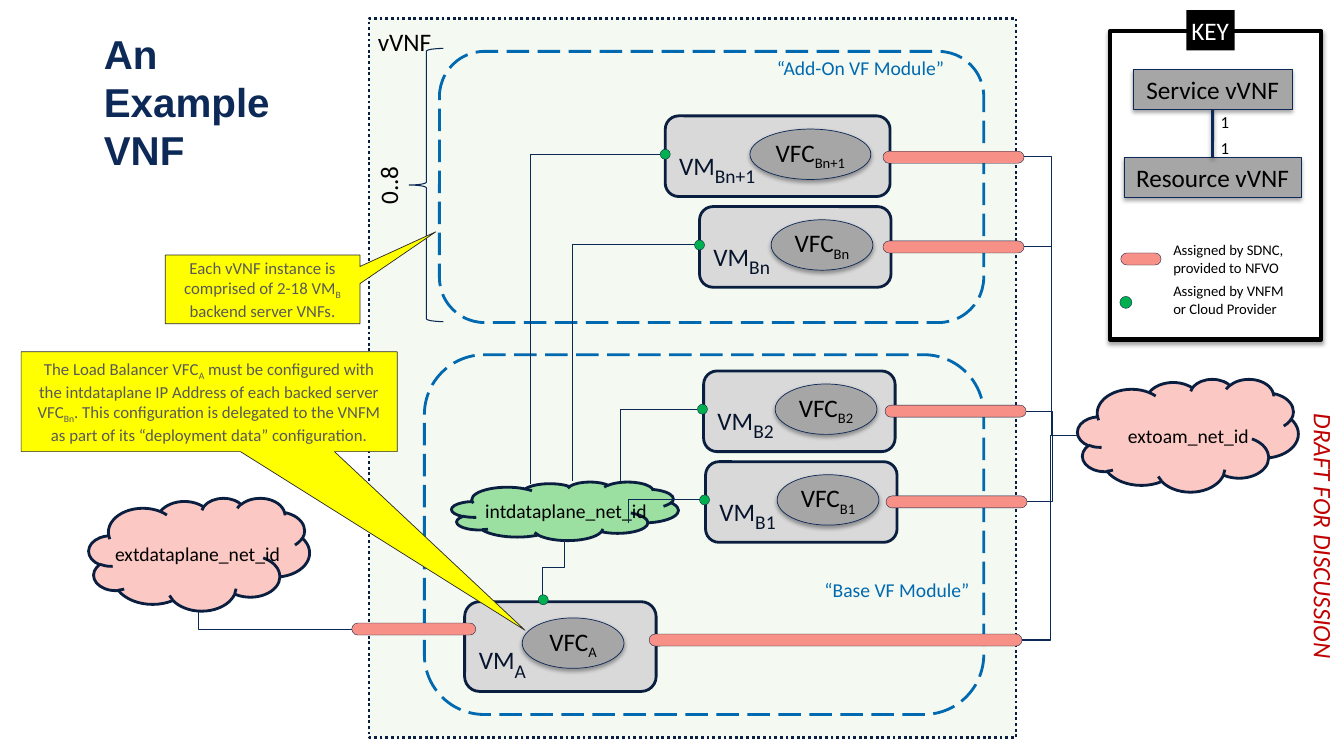
from lxml.etree import SubElement
from pptx import Presentation
from pptx.dml.color import RGBColor
from pptx.enum.dml import MSO_LINE
from pptx.enum.shapes import MSO_CONNECTOR, MSO_SHAPE
from pptx.enum.text import MSO_ANCHOR, MSO_AUTO_SIZE, PP_ALIGN
from pptx.oxml.ns import qn
from pptx.util import Pt

NAVY, LINK, EDGE, BLUE = "0A1E40", "0B2857", "0D2957", "0069B0"
BLACK, WHITE, GRAY, LIGHT = "000000", "FFFFFF", "A6A6A6", "D9D9D9"
PINK, SALMON, GREEN, YELLOW = "FBC8C4", "F79188", "00B050", "FFFF00"

# Content: all lengths in points, "~" switches subscript on and off
FRAMES = [  # left, top, width, height, shape, fill, line, dash
    (263.5, 13, 462.2, 514, MSO_SHAPE.RECTANGLE, "F4F9F1", NAVY, MSO_LINE.ROUND_DOT),
    (313.9, 36.7, 388.8, 193.7, MSO_SHAPE.ROUNDED_RECTANGLE, None, BLUE, MSO_LINE.LONG_DASH),
    (303.1, 253.4, 399.6, 257, MSO_SHAPE.ROUNDED_RECTANGLE, None, BLUE, MSO_LINE.LONG_DASH),
]
MACHINES = [  # name, left, top, width, height, VFC left, VFC top, VFC width
    ("A", 331.9, 429.8, 136.8, 64.1, 373, 441.4, 72.7),
    ("B1", 504, 329.8, 136.8, 57.6, 555.1, 339.1, 72.7),
    ("B2", 502.6, 265, 136.8, 57.6, 553.7, 274.3, 72.7),
    ("Bn", 499.7, 147.6, 136.8, 57.6, 550.8, 157, 72.7),
    ("Bn+1", 475.2, 82.8, 160.6, 57.6, 535.7, 92.2, 86.4),
]
DOTS = [(384.5, 424.8), (499.7, 353.5), (498.2, 288.7), (496.1, 171.4), (471.6, 106.6)]
BARS = [(251.3, 445, 88.6), (463.7, 452.9, 266.4), (632.9, 354.2, 100.8),
        (632.2, 289.4, 100.8), (630.7, 172.1, 100.8), (630.7, 108, 100.8)]
CLOUDS = [  # left, top, width, height, fill
    (63.4, 355.7, 157.7, 80.6, PINK),
    (769.7, 270.7, 157.7, 80.6, PINK),
    (322.6, 344.2, 162, 41.8, "9BDFA1"),
]
CALLOUTS = [  # left, top, width, height, tip, text
    (118.1, 182.2, 139, 49, (0.89, -0.84),
     "Each vVNF instance is comprised of 2-18 VM~B~ backend server VNFs."),
    (15.1, 251.3, 268.6, 71.3, (0.84, 2.29),
     "The Load Balancer VFC~A~ must be configured with the intdataplane IP Address of "
     "each backed server VFC~Bn~. This configuration is delegated to the VNFM as part "
     "of its “deployment data” configuration."),
]
LABELS = [  # text, left, top, width, height, size, colour, rotation, italic
    ("vVNF", 262.8, 15.1, 53.3, 28.8, 18, BLACK, 0, False),
    ("“Base VF Module”", 581.8, 409, 119.5, 24.5, 14, BLUE, 0, False),
    ("“Add-On VF Module”", 547.9, 36.7, 136.1, 24.5, 14, BLUE, 0, False),
    ("extdataplane_net_id", 74.2, 383.8, 133.9, 24.5, 14, BLACK, 0, False),
    ("extoam_net_id", 797.8, 299.5, 102.2, 24.5, 14, BLACK, 0, False),
    ("intdataplane_net_id", 338.4, 352.8, 131.8, 24.5, 14, BLACK, 0, False),
    ("0..8", 254.9, 116.6, 44.6, 28.8, 18, BLACK, 270, False),
    ("DRAFT FOR DISCUSSION", 849.6, 370.1, 192.2, 28.8, 18, "C00000", 90, True),
]
OAM = (770.4, 311)
LINKS = [  # start, end, position of the bend, rotation
    ((448.6, 373.7), (499.7, 357.1), 0, 0),
    ((141.8, 436.3), (251.3, 449.3), 0, 0),
    ((442.8, 343.4), (498.2, 292.3), 0.01, 0),
    ((409, 343.4), (496.1, 175), 0, 0),
    ((378.7, 345.6), (471.6, 110.2), 0, 0),
    ((415.4, 413.3), (375.8, 397.5), 0.5, 90),
    ((730.1, 457.2), OAM, 0.5, 0),
    ((731.5, 111.6), OAM, 0.5, 0),
    ((731.5, 176.4), OAM, 0.5, 0),
    ((733.7, 358.6), OAM, 0.5, 0),
    ((733, 293.8), OAM, 0.5, 0),
]
KEY_BOXES = [("Service vVNF", 809.3, 49.7, 113.8), ("Resource vVNF", 802.8, 112.3, 126.7)]
KEY_NOTES = [("Assigned by SDNC, provided to NFVO", 168.5),
             ("Assigned by VNFM or Cloud Provider", 198)]

deck = Presentation()
deck.slide_width, deck.slide_height = Pt(960), Pt(540)
page = deck.slides.add_slide(deck.slide_layouts[5])


def colour(code):
    return RGBColor.from_string(code)


def add_effects(item, shadow):
    effects = SubElement(item._element.spPr, qn("a:effectLst"))
    if shadow:
        outer = SubElement(effects, qn("a:outerShdw"), blurRad=str(Pt(3)),
                           dist=str(Pt(1.8)), dir="5400000", rotWithShape="0")
        tone = SubElement(outer, qn("a:srgbClr"), val=BLACK)
        SubElement(tone, qn("a:alpha"), val="35000")


def draw(kind, left, top, width, height, fill, line=None, weight=2, shadow=False):
    shape = page.shapes.add_shape(kind, Pt(left), Pt(top), Pt(width), Pt(height))
    if fill:
        shape.fill.solid()
        shape.fill.fore_color.rgb = colour(fill)
    else:
        shape.fill.background()
    if line:
        shape.line.color.rgb = colour(line)
        shape.line.width = Pt(weight)
    else:
        shape.line.fill.background()
    add_effects(shape, shadow)
    return shape


def write(shape, text, size, tone, align=PP_ALIGN.CENTER, anchor=MSO_ANCHOR.MIDDLE,
          inset=None, sub_size=None, italic=False):
    frame = shape.text_frame
    frame.vertical_anchor = anchor
    if inset is not None:
        frame.margin_left = frame.margin_right = Pt(inset)
        frame.margin_top = frame.margin_bottom = Pt(inset)
    para = frame.paragraphs[0]
    para.alignment = align
    para.font.name, para.font.size, para.font.italic = "Calibri", Pt(size), italic
    para.font.color.rgb = colour(tone)
    for index, part in enumerate(text.split("~")):
        span = para.add_run()
        span.text = part
        if index % 2:
            span._r.get_or_add_rPr().set("baseline", "-25000")
            if sub_size:
                span.font.size = Pt(sub_size)


def label(text, left, top, width, height, size, tone, wrap=False, align=PP_ALIGN.LEFT, **style):
    box = page.shapes.add_textbox(Pt(left), Pt(top), Pt(width), Pt(height))
    box.text_frame.word_wrap = wrap
    box.text_frame.auto_size = MSO_AUTO_SIZE.SHAPE_TO_FIT_TEXT
    write(box, text, size, tone, align, MSO_ANCHOR.TOP, **style)
    return box


def connect(kind, start, end, tone, weight, shadow=False):
    line = page.shapes.add_connector(kind, *[Pt(value) for value in start + end])
    line.line.color.rgb = colour(tone)
    line.line.width = Pt(weight)
    add_effects(line, shadow)
    return line


def draw_bar(left, top, width):
    bar = draw(MSO_SHAPE.ROUNDED_RECTANGLE, left, top, width, 8.6, SALMON, NAVY, 0.25)
    bar.adjustments[0] = 0.5


# Title
title = page.shapes.title
title.left, title.top, title.width, title.height = Pt(67), Pt(27.4), Pt(176.4), Pt(90)
title.text = "An Example VNF"
frame = title.text_frame
frame.auto_size, frame.vertical_anchor = MSO_AUTO_SIZE.NONE, MSO_ANCHOR.MIDDLE
frame.margin_left = frame.margin_right = frame.margin_top = frame.margin_bottom = Pt(7.2)
para = frame.paragraphs[0]
para.alignment = PP_ALIGN.LEFT
para.font.name, para.font.size, para.font.bold = "Arial", Pt(28.8), True
para.font.color.rgb = colour(EDGE)

# Frames and brace
for left, top, width, height, kind, fill, tone, dash in FRAMES:
    draw(kind, left, top, width, height, fill, tone).line.dash_style = dash
draw(MSO_SHAPE.LEFT_BRACE, 292.3, 34.6, 24.5, 195.1, None, LINK, 0.75)

# Virtual machines with their VFCs
for name, left, top, width, height, vfc_left, vfc_top, vfc_width in MACHINES:
    machine = draw(MSO_SHAPE.ROUNDED_RECTANGLE, left, top, width, height, LIGHT, NAVY)
    write(machine, f"VM~{name}", 18, "06142C", PP_ALIGN.LEFT, MSO_ANCHOR.BOTTOM, sub_size=24)
    vfc = draw(MSO_SHAPE.OVAL, vfc_left, vfc_top, vfc_width, 36, GRAY, EDGE, 0.5, True)
    write(vfc, f"VFC~{name}", 18, BLACK, inset=3.6)

# Callouts, clouds and labels
for left, top, width, height, tip, text in CALLOUTS:
    callout = draw(MSO_SHAPE.RECTANGULAR_CALLOUT, left, top, width, height, YELLOW, "2A2A2A", 0.5)
    callout.adjustments[0], callout.adjustments[1] = tip
    write(callout, text, 12, "595959")
for left, top, width, height, fill in CLOUDS:
    draw(MSO_SHAPE.CLOUD, left, top, width, height, fill, NAVY)
for text, left, top, width, height, size, tone, rotation, italic in LABELS:
    align = PP_ALIGN.CENTER if text.endswith("_net_id") else PP_ALIGN.LEFT
    box = label(text, left, top, width, height, size, tone, align=align, italic=italic)
    box.rotation = rotation

# Network links, ports and address bars
for start, end, bend, rotation in LINKS:
    link = connect(MSO_CONNECTOR.ELBOW, start, end, LINK, 0.75)
    guides = link._element.spPr.find(qn("a:prstGeom")).get_or_add_avLst()
    SubElement(guides, qn("a:gd"), name="adj1", fmla=f"val {round(bend * 100000)}")
    if rotation:
        link._element.spPr.find(qn("a:xfrm")).set("rot", str(rotation * 60000))
for left, top in DOTS:
    draw(MSO_SHAPE.OVAL, left, top, 7.2, 7.2, GREEN, NAVY, 0.25)
for left, top, width in BARS:
    draw_bar(left, top, width)

# Key
draw(MSO_SHAPE.RECTANGLE, 792.7, 22.3, 151.2, 220.3, WHITE, BLACK, 3, True)
key_shapes = []
for text, left, top, width in KEY_BOXES:
    key_box = draw(MSO_SHAPE.RECTANGLE, left, top, width, 28.8, GRAY, EDGE, 0.5, True)
    write(key_box, text, 18, BLACK, inset=3.6)
    key_shapes.append(key_box)
relation = connect(MSO_CONNECTOR.STRAIGHT, (866.2, 78.5), (866.2, 112.3), EDGE, 2, True)
relation.begin_connect(key_shapes[0], 2)
relation.end_connect(key_shapes[1], 0)
for top in (76.3, 95):
    label("1", 868.3, top, 13.7, 21.6, 12, BLACK, inset=3.6)
draw_bar(800.6, 180.7, 28.8)
draw(MSO_SHAPE.OVAL, 799.9, 211.7, 8.6, 8.6, GREEN, NAVY, 0.25)
for text, top in KEY_NOTES:
    label(text, 834.5, top, 96.5, 32.4, 10.5, BLACK, wrap=True, inset=3.6)
heading = label("KEY", 847.4, 7.2, 34.6, 28.8, 18, WHITE, inset=3.6)
heading.fill.solid()
heading.fill.fore_color.rgb = colour(BLACK)

deck.save("out.pptx")
